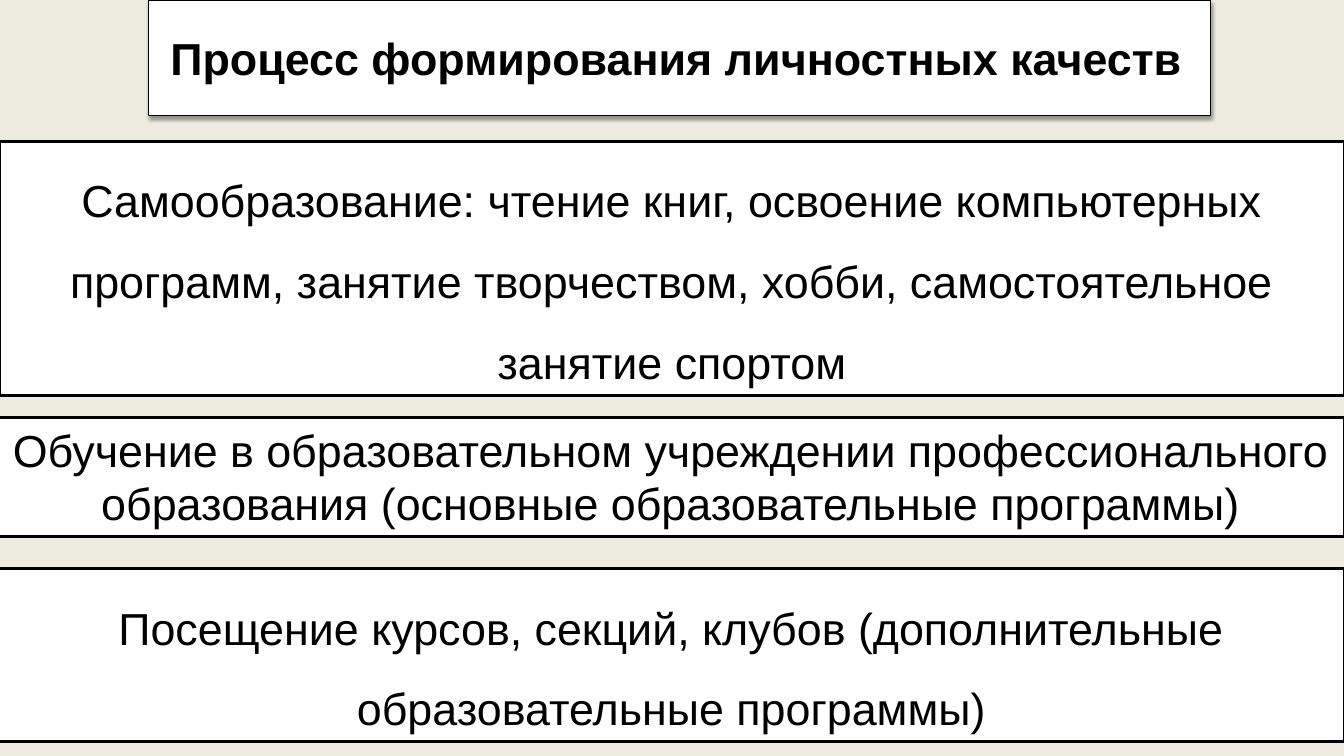
import pptx
import pptx.util
import pptx.dml.color
import pptx.enum.shapes
import pptx.enum.text
import pptx.oxml
import pptx.oxml.ns

Inches = pptx.util.Inches
Pt = pptx.util.Pt
ALIGN = pptx.enum.text.PP_ALIGN
ANCHOR = pptx.enum.text.MSO_ANCHOR
AUTO_SIZE = pptx.enum.text.MSO_AUTO_SIZE

COLORS = {"background": "EEECE1", "panel": "FFFFFF", "ink": "000000"}
TITLE = "Процесс формирования личностных качеств"
TITLE_BOX = (1.47, 0, 10.54, 1.15)

# Box, line spacing and wording of each way of development
WAYS = [
    ((0, 1.4, 13.33, 2.52), 1.5,
     "Самообразование: чтение книг, освоение компьютерных программ, "
     "занятие творчеством, хобби, самостоятельное занятие спортом"),
    ((-0.02, 4.14, 13.35, 1.18), 1.0,
     "Обучение в образовательном учреждении профессионального "
     "образования (основные образовательные программы)"),
    ((-0.01, 5.64, 13.34, 1.72), 1.5,
     "Посещение курсов, секций, клубов (дополнительные "
     "образовательные программы)"),
]


def color(name):
    return pptx.dml.color.RGBColor.from_string(COLORS[name])


def add_panel(page, box, text, line_width):
    """White outlined rectangle with one paragraph of text."""
    panel = page.shapes.add_shape(
        pptx.enum.shapes.MSO_SHAPE.RECTANGLE, *map(Inches, box))
    panel.shadow.inherit = False
    panel.fill.solid()
    panel.fill.fore_color.rgb = color("panel")
    panel.line.color.rgb = color("ink")
    panel.line.width = Pt(line_width)
    frame = panel.text_frame
    frame.word_wrap = True
    frame.text = text
    font = frame.paragraphs[0].runs[0].font
    font.name = "Arial"
    font.size = Pt(32)
    font.color.rgb = color("ink")
    return panel


def add_shadow(shape):
    """Soft shadow falling straight down."""
    effects = shape._element.spPr.find(pptx.oxml.ns.qn("a:effectLst"))
    effects.append(pptx.oxml.parse_xml(
        f'<a:outerShdw {pptx.oxml.ns.nsdecls("a")} blurRad="{Pt(3.1)}" '
        f'dist="{Pt(1.6)}" dir="5400000" rotWithShape="0">'
        f'<a:srgbClr val="{COLORS["ink"]}"><a:alpha val="38000"/></a:srgbClr>'
        '</a:outerShdw>'))


def add_title(page, box):
    panel = add_panel(page, box, TITLE, 0.75)
    add_shadow(panel)
    frame = panel.text_frame
    frame.vertical_anchor = ANCHOR.MIDDLE
    frame.margin_left = Inches(0.22)
    para = frame.paragraphs[0]
    para.alignment = ALIGN.LEFT
    para.runs[0].font.bold = True


def add_way(page, box, spacing, text):
    frame = add_panel(page, box, text, 2).text_frame
    frame.vertical_anchor = ANCHOR.TOP
    frame.auto_size = AUTO_SIZE.SHAPE_TO_FIT_TEXT
    para = frame.paragraphs[0]
    para.alignment = ALIGN.CENTER
    para.line_spacing = spacing


def main():
    deck = pptx.Presentation()
    deck.slide_width = Inches(13.33)
    deck.slide_height = Inches(7.5)
    page = deck.slides.add_slide(deck.slide_layouts[6])
    page.background.fill.solid()
    page.background.fill.fore_color.rgb = color("background")

    add_title(page, TITLE_BOX)
    for box, spacing, text in WAYS:
        add_way(page, box, spacing, text)
    deck.save("out.pptx")


if __name__ == "__main__":
    main()
